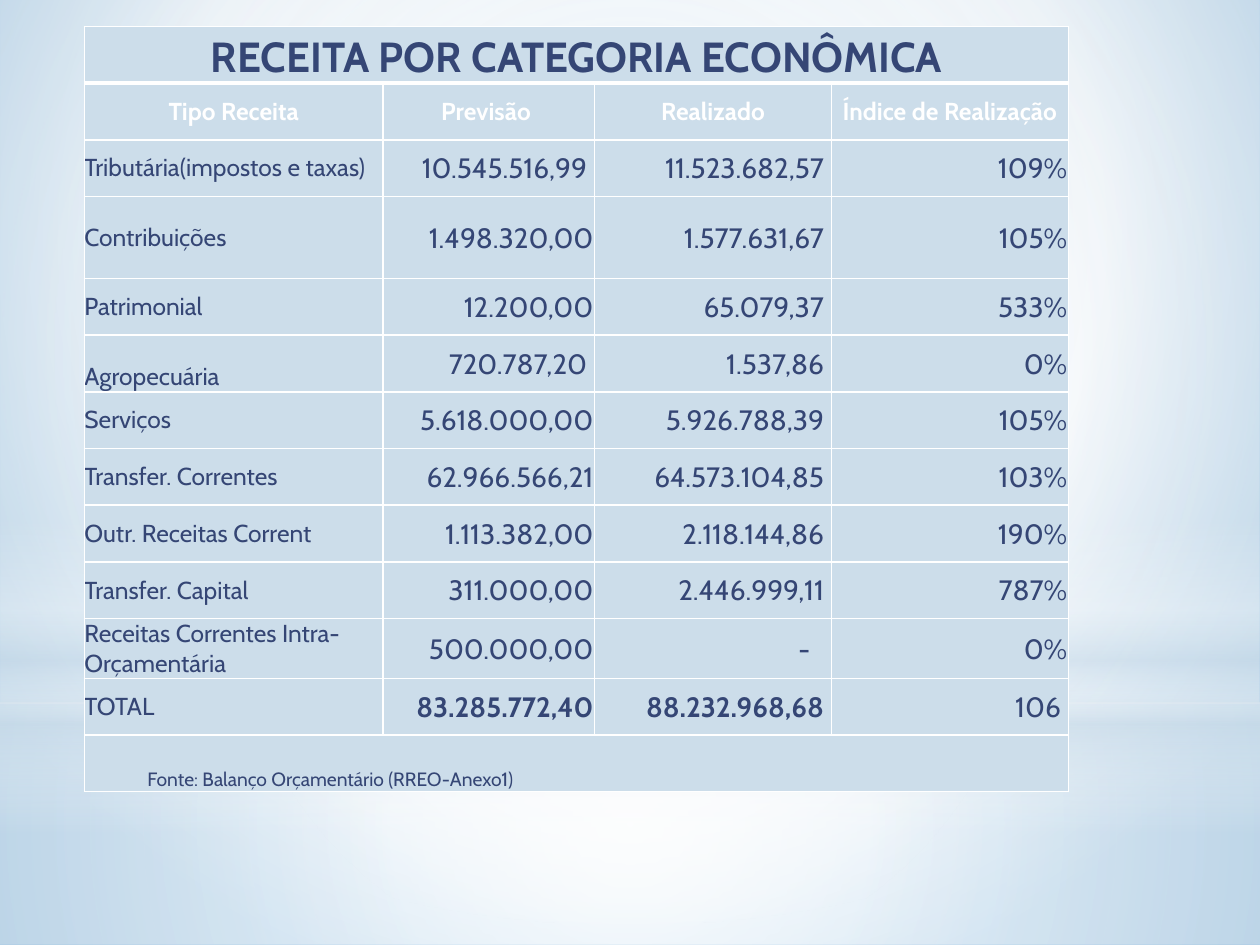
from lxml import etree
from pptx import Presentation
from pptx.dml.color import RGBColor
from pptx.enum.shapes import MSO_SHAPE
from pptx.enum.text import MSO_ANCHOR, PP_ALIGN
from pptx.oxml import parse_xml
from pptx.oxml.ns import nsdecls, qn
from pptx.util import Inches, Pt

# Content
TITLE = "RECEITA POR CATEGORIA ECONÔMICA"
HEADERS = ["Tipo Receita", "Previsão ", "Realizado", "Índice de Realização"]
REVENUES = [
    ("Tributária(impostos e taxas)", "10.545.516,99 ", "11.523.682,57 ", "109%"),
    ("Contribuições", "1.498.320,00", "1.577.631,67 ", "105%"),
    ("Patrimonial", "12.200,00", "65.079,37 ", "533%"),
    ("Agropecuária", "720.787,20 ", "1.537,86 ", "0%"),
    ("Serviços", "5.618.000,00", "5.926.788,39 ", "105%"),
    ("Transfer. Correntes", "62.966.566,21", "64.573.104,85 ", "103%"),
    ("Outr. Receitas Corrent", "1.113.382,00", "2.118.144,86 ", "190%"),
    ("Transfer. Capital", "311.000,00", "2.446.999,11 ", "787%"),
    ("Receitas Correntes Intra-Orçamentária", "500.000,00", "- ", "0%"),
    ("TOTAL", "83.285.772,40", "88.232.968,68 ", "106 "),
]
SOURCE = "Fonte: Balanço Orçamentário (RREO-Anexo1)"

FONT = "Cabin"
COLORS = {"text": "354675", "cell": "CCDDEA", "white": "FFFFFF",
          "pale": "BCD5E8", "sky": "82B6DE"}
COLUMN_WIDTHS = [2.37, 1.68, 1.88, 1.88]
ROW_HEIGHT, TALL_ROW_HEIGHT = 0.45, 0.65
CENTER = (50, 50, 50, 50)

# Gradients: stops are (position, color, opacity), all in percent
BACKGROUND = [(0, "pale", 100), (60, "white", 100), (100, "sky", 100)]
LAYERS = [
    (MSO_SHAPE.RECTANGLE, 5.58, 1.92, CENTER,
     [(0, "white", 91), (37, "white", 76), (100, "cell", 79)]),
    (MSO_SHAPE.RECTANGLE, 0, 5.58, CENTER,
     [(0, "white", 89), (48, "white", 62), (100, "cell", 79)]),
    (MSO_SHAPE.RECTANGLE, 4.12, 2.5, None,
     [(0, "white", 0), (29, "white", 30), (45, "cell", 40),
      (55, "white", 26), (65, "cell", 60), (100, "white", 0)]),
    (MSO_SHAPE.OVAL, 1.75, 5.58, CENTER, [(0, "white", 100), (56, "white", 0)]),
]


def rgb(name):
    return RGBColor.from_string(COLORS[name])


def set_gradient(properties, stops, focus):
    """Swap the solid fill for a gradient: radial with a focus, else vertical."""
    stop_xml = "".join(
        f'<a:gs pos="{position * 1000}"><a:srgbClr val="{COLORS[color]}">'
        f'<a:alpha val="{opacity * 1000}"/></a:srgbClr></a:gs>'
        for position, color, opacity in stops)
    if focus:
        sides = " ".join(f'{side}="{value * 1000}"' for side, value in zip("ltrb", focus))
        direction = f'<a:path path="circle"><a:fillToRect {sides}/></a:path>'
    else:
        direction = '<a:lin ang="5400000" scaled="0"/>'
    gradient = parse_xml(f'<a:gradFill {nsdecls("a")} rotWithShape="1">'
                         f'<a:gsLst>{stop_xml}</a:gsLst>{direction}</a:gradFill>')
    properties.replace(properties.find(qn("a:solidFill")), gradient)


def set_borders(cell, top=1, bottom=1):
    properties = cell._tc.get_or_add_tcPr()
    for side, points in (("L", 1), ("R", 1), ("T", top), ("B", bottom)):
        line = etree.SubElement(properties, qn(f"a:ln{side}"), w=str(Pt(points)))
        fill = etree.SubElement(line, qn("a:solidFill"))
        etree.SubElement(fill, qn("a:srgbClr"), val=COLORS["white"])


def write_cell(cell, text, size, align=PP_ALIGN.LEFT, bold=False, color="text",
               anchor=MSO_ANCHOR.MIDDLE, margin=0):
    cell.text = text
    cell.vertical_anchor = anchor
    cell.margin_left = cell.margin_right = cell.margin_top = Inches(margin)
    cell.margin_bottom = 0
    paragraph = cell.text_frame.paragraphs[0]
    paragraph.alignment = align
    font = paragraph.font
    font.name, font.size, font.bold = FONT, Pt(size), bold
    font.color.rgb = rgb(color)


presentation = Presentation()
presentation.slide_width, presentation.slide_height = Inches(10), Inches(7.5)
slide = presentation.slides.add_slide(presentation.slide_layouts[6])

# Background and its soft light layers
slide.background.fill.solid()
set_gradient(slide._element.find(".//" + qn("p:bgPr")), BACKGROUND, (20, 10, 20, 60))
for kind, top, height, focus, stops in LAYERS:
    shape = slide.shapes.add_shape(kind, 0, Inches(top), Inches(10), Inches(height))
    shape.shadow.inherit = False
    shape.line.fill.background()
    shape.fill.solid()
    set_gradient(shape._element.spPr, stops, focus)

# Table grid
row_count = len(REVENUES) + 3
last_row = row_count - 1
table = slide.shapes.add_table(
    row_count, len(HEADERS), Inches(0.67), Inches(0.21),
    Inches(sum(COLUMN_WIDTHS)), Inches(ROW_HEIGHT * row_count)).table
for column, width in zip(table.columns, COLUMN_WIDTHS):
    column.width = Inches(width)
for row_index, row in enumerate(table.rows):
    row.height = Inches(TALL_ROW_HEIGHT if row_index == 3 else ROW_HEIGHT)
    for cell in row.cells:
        set_borders(cell, top=3 if row_index == 1 else 1,
                    bottom=3 if row_index == 0 else 1)
        cell.fill.solid()
        cell.fill.fore_color.rgb = rgb("cell")
for row_index in (0, last_row):
    table.cell(row_index, 0).merge(table.cell(row_index, len(HEADERS) - 1))

# Title, headers and source
write_cell(table.cell(0, 0), TITLE, 24, PP_ALIGN.CENTER, bold=True,
           anchor=MSO_ANCHOR.BOTTOM)
for column_index, header in enumerate(HEADERS):
    write_cell(table.cell(1, column_index), header, 14, PP_ALIGN.CENTER,
               bold=True, color="white")
source_cell = table.cell(last_row, 0)
write_cell(source_cell, SOURCE, 11, anchor=MSO_ANCHOR.BOTTOM)
source_properties = source_cell.text_frame.paragraphs[0]._p.get_or_add_pPr()
source_properties.set("marL", str(Inches(0.5)))
source_properties.set("indent", "0")
source_properties.set("lvl", "1")

# Revenue rows
for row_index, (name, *values) in enumerate(REVENUES, start=2):
    anchor = MSO_ANCHOR.BOTTOM if name == "Agropecuária" else MSO_ANCHOR.MIDDLE
    write_cell(table.cell(row_index, 0), name, 14, anchor=anchor)
    for column_index, value in enumerate(values, start=1):
        cell = table.cell(row_index, column_index)
        write_cell(cell, value, 16, PP_ALIGN.RIGHT, margin=0.01,
                   bold=name == "TOTAL" and column_index < 3)
        if value == "- ":
            cell.margin_right = Inches(0.12)

presentation.save("out.pptx")
